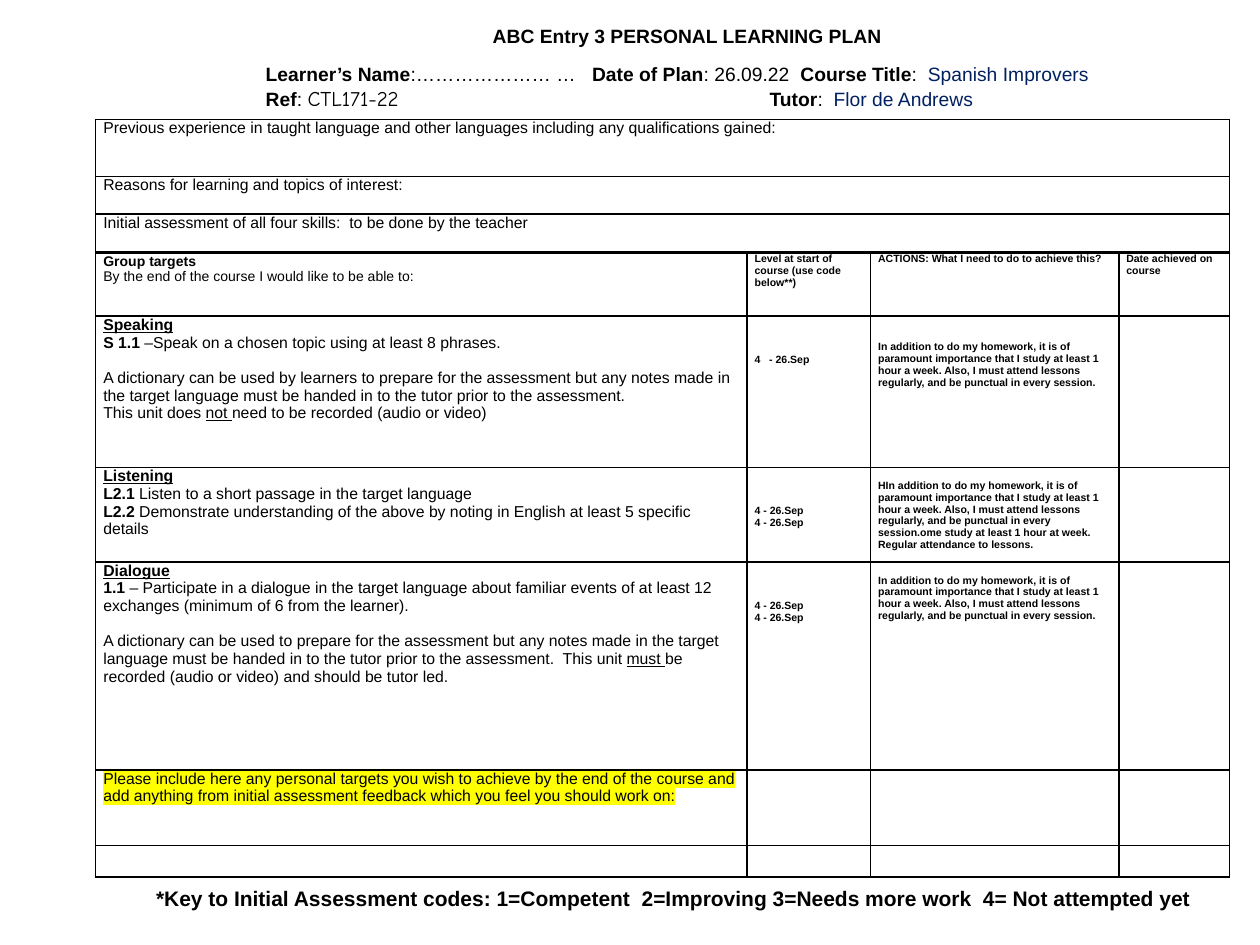
from typing import NamedTuple

from lxml import etree
from pptx import Presentation
from pptx.dml.color import RGBColor
from pptx.enum.text import MSO_ANCHOR, PP_ALIGN
from pptx.oxml.ns import qn
from pptx.util import Inches, Pt

CENTER, LEFT, TOP = PP_ALIGN.CENTER, PP_ALIGN.LEFT, MSO_ANCHOR.TOP
BLACK = RGBColor(0x00, 0x00, 0x00)
NAVY = RGBColor(0x00, 0x20, 0x60)
YELLOW = RGBColor(0xFF, 0xFF, 0x00)

SLIDE_W, SLIDE_H = Inches(10), Inches(7.5)
COLUMN, ROW = SLIDE_W / 200, SLIDE_H / 150
CELL_INSET = 1.2
SMALL_LINE = 2
SMALL, MEDIUM, BODY, HEADING, KEY = 6, 8, 9, 11, 12


class Box(NamedTuple):
    left: float
    top: float
    width: float
    height: float

    def emu(self):
        return (round(self.left * COLUMN), round(self.top * ROW),
                round(self.width * COLUMN), round(self.height * ROW))


class Run(NamedTuple):
    text: str
    size: float = BODY
    bold: bool = False
    underline: bool = False
    color: RGBColor = BLACK
    font: str = "Arial"
    highlight: RGBColor = None


class Line(NamedTuple):
    runs: list
    before: float = 0
    align: int = LEFT
    tab: float = None


class Entry(NamedTuple):
    lines: list = []
    skip: float = 0


def add_run(paragraph, part):
    run = paragraph.add_run()
    run.text = part.text
    font = run.font
    font.size, font.bold, font.underline = Pt(part.size), part.bold, part.underline
    font.color.rgb = part.color
    if part.highlight is not None:
        mark = etree.Element(qn("a:highlight"))
        etree.SubElement(mark, qn("a:srgbClr"), val=str(part.highlight))
        font._element.find(qn("a:solidFill")).addnext(mark)
    font.name = part.font


def write_lines(frame, lines):
    for index, line in enumerate(lines):
        paragraph = frame.paragraphs[0] if index == 0 else frame.add_paragraph()
        paragraph.alignment = line.align
        if line.before:
            paragraph.space_before = Pt(line.before)
        if line.tab is not None:
            tabs = etree.SubElement(paragraph._p.get_or_add_pPr(), qn("a:tabLst"))
            etree.SubElement(tabs, qn("a:tab"), pos=str(round(line.tab * COLUMN)), algn="l")
        for part in line.runs:
            add_run(paragraph, part)


def add_text(slide, box, lines):
    frame = slide.shapes.add_textbox(*box.emu()).text_frame
    frame.word_wrap = True
    write_lines(frame, lines)


def outline_cell(cell):
    properties = cell._tc.get_or_add_tcPr()
    for index, edge in enumerate(("lnL", "lnR", "lnT", "lnB")):
        border = etree.Element(qn(f"a:{edge}"), w=str(Pt(1)))
        fill = etree.SubElement(border, qn("a:solidFill"))
        etree.SubElement(fill, qn("a:srgbClr"), val=str(BLACK))
        properties.insert(index, border)


def fill_cell(cell, entry):
    cell.fill.background()
    cell.vertical_anchor = TOP
    cell.margin_left = cell.margin_right = round(CELL_INSET * COLUMN)
    cell.margin_top, cell.margin_bottom = round(entry.skip * ROW), 0
    outline_cell(cell)
    if entry.lines:
        write_lines(cell.text_frame, entry.lines)
    else:
        end = cell.text_frame.paragraphs[0]._p.get_or_add_endParaRPr()
        end.set("sz", str(SMALL * 100))


def add_grid(slide, box, widths, heights, entries):
    table = slide.shapes.add_table(len(heights), len(widths), *box.emu()).table
    table.first_row = table.horz_banding = False
    for column, width in zip(table.columns, widths):
        column.width = round(box.width * width / sum(widths) * COLUMN)
    for row, height in zip(table.rows, heights):
        row.height = round(box.height * height / sum(heights) * ROW)
    for row, row_entries in zip(table.rows, entries):
        for cell, entry in zip(row.cells, row_entries):
            fill_cell(cell, entry)


def bold(text, size=BODY):
    return Run(text, size, bold=True)


def title(text):
    return Line([Run(text, bold=True, underline=True)])


def small(*texts, skip=0):
    return Entry([Line([bold(text, SMALL)]) for text in texts], skip * SMALL_LINE)


def add_heading(slide, box):
    def plain(text, color=BLACK):
        return Run(text, HEADING, color=color)

    def label(text):
        return bold(text, HEADING)

    add_text(slide, box, [
        Line([label("ABC Entry 3 PERSONAL LEARNING PLAN")], align=CENTER),
        Line([label("Learner’s Name"), plain(":………………… …   "),
              label("Date of Plan"), plain(": 26.09.22  "),
              label("Course Title"), plain(":  "),
              plain("Spanish Improvers", NAVY)], before=9),
        Line([label("Ref"), plain(": "),
              Run("CTL171-22\t", KEY, font="Comic Neue"),
              label("Tutor"), plain(":  "),
              plain("Flor de Andrews", NAVY)], tab=80),
    ])


def add_background(slide, box):
    prompts = [
        "Previous experience in taught language and other languages "
        "including any qualifications gained:",
        "Reasons for learning and topics of interest:",
        "Initial assessment of all four skills:  to be done by the teacher",
    ]
    add_grid(slide, box, [1], [9, 6, 6],
             [[Entry([Line([Run(prompt)])])] for prompt in prompts])


def add_targets(slide, box):
    homework = ("In addition to do my homework, it is of paramount importance that I study "
                "at least 1 hour a week. Also, I must attend lessons regularly, "
                "and be punctual in every session.")
    level = "4 - 26.Sep"
    blank = Entry()
    goals = Entry([
        Line([bold("Group targets", MEDIUM)]),
        Line([Run("By the end of the course I would like to be able to:", MEDIUM)]),
    ])
    speaking = Entry([
        title("Speaking"),
        Line([bold("S 1.1"), Run(" –Speak on a chosen topic using at least 8 phrases.")]),
        Line([Run("A dictionary can be used by learners to prepare for the assessment but any "
                  "notes made in the target language must be handed in to the tutor prior to "
                  "the assessment.")], before=10),
        Line([Run("This unit does "), Run("not ", underline=True),
              Run("need to be recorded (audio or video)")]),
    ])
    listening = Entry([
        title("Listening"),
        Line([bold("L2.1"), Run(" Listen to a short passage in the target language")]),
        Line([bold("L2.2 "), Run("Demonstrate understanding of the above by noting in English "
                                 "at least 5 specific details")]),
    ])
    dialogue = Entry([
        title("Dialogue"),
        Line([bold("1.1"), Run(" – Participate in a dialogue in the target language about "
                               "familiar events of at least 12 exchanges (minimum of 6 from "
                               "the learner).")]),
        Line([Run("A dictionary can be used to prepare for the assessment but any notes made in "
                  "the target language must be handed in to the tutor prior to the "
                  "assessment.  This unit "), Run("must ", underline=True),
              Run("be recorded (audio or video) and should be tutor led.")], before=10),
    ])
    personal = Entry([Line([Run(
        "Please include here any personal targets you wish to achieve by the end of the course "
        "and add anything from initial assessment feedback which you feel you should work on:",
        highlight=YELLOW)])])
    add_grid(slide, box, [103.4, 19.6, 39.4, 17.6], [10, 24, 15, 33, 12, 5], [
        [goals, small("Level at start of course (use code below**)"),
         small("ACTIONS: What I need to do to achieve this?"), small("Date achieved on course")],
        [speaking, small("4   - 26.Sep", skip=3), small(homework, skip=2), blank],
        [listening, small(level, level, skip=3),
         small("H" + homework + "ome study at least 1 hour at week. "
               "Regular attendance to lessons.", skip=1), blank],
        [dialogue, small(level, level, skip=3), small(homework, skip=1), blank],
        [personal, blank, blank, blank],
        [blank] * 4,
    ])


def add_key(slide, box):
    add_text(slide, box, [Line([bold(
        "*Key to Initial Assessment codes: 1=Competent  2=Improving "
        "3=Needs more work  4= Not attempted yet", KEY)])])


def main():
    deck = Presentation()
    deck.slide_width, deck.slide_height = SLIDE_W, SLIDE_H
    slide = deck.slides.add_slide(deck.slide_layouts[6])
    add_targets(slide, Box(15.2, 40.2, 180, 99))
    add_key(slide, Box(22.8, 139.6, 172.4, 6))
    add_background(slide, Box(15.2, 19, 180, 21))
    add_heading(slide, Box(40.2, 2.8, 137.8, 16.2))
    deck.save("out.pptx")


if __name__ == "__main__":
    main()
